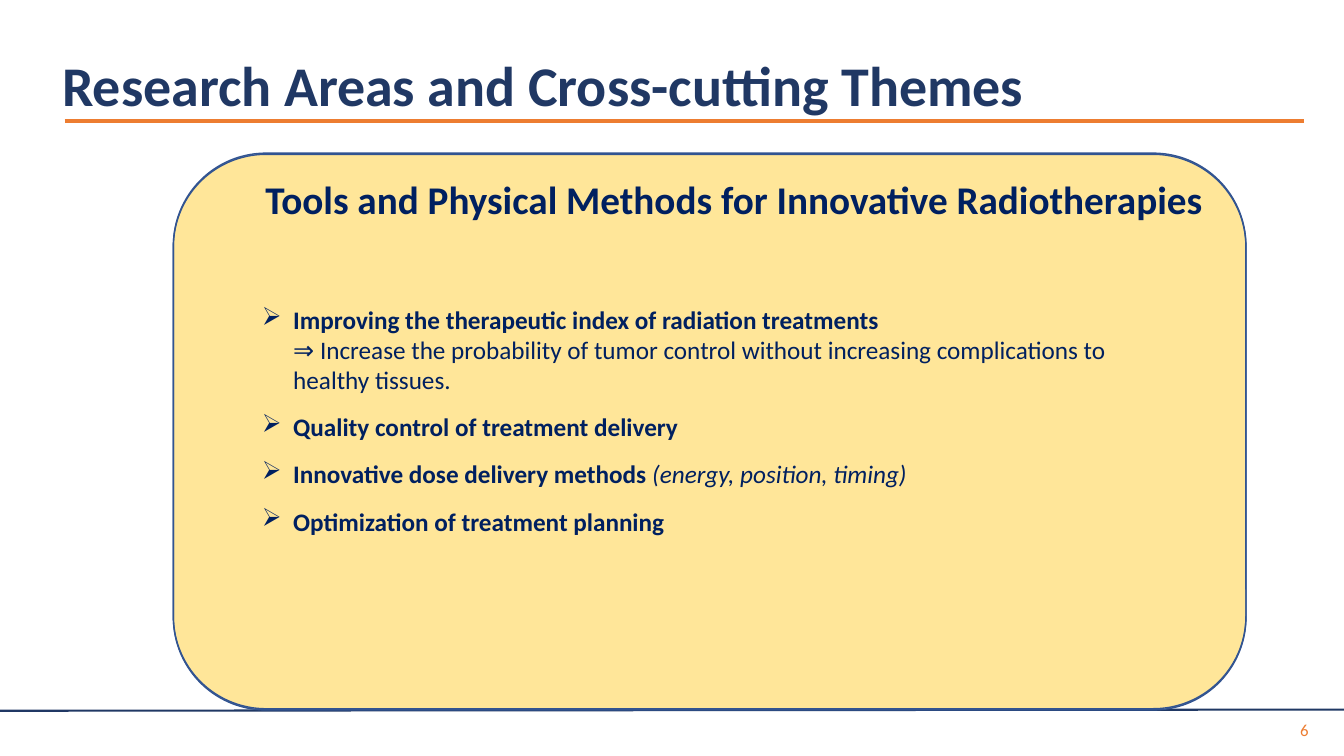
from lxml import etree
from pptx import Presentation
from pptx.dml.color import RGBColor
from pptx.enum.shapes import MSO_CONNECTOR, MSO_SHAPE
from pptx.enum.text import MSO_ANCHOR, MSO_AUTO_SIZE, PP_ALIGN
from pptx.oxml.ns import qn
from pptx.util import Cm, Pt

STRAIGHT = MSO_CONNECTOR.STRAIGHT
ROUNDED = MSO_SHAPE.ROUNDED_RECTANGLE
TOP, MIDDLE = MSO_ANCHOR.TOP, MSO_ANCHOR.MIDDLE
GROW, FIXED = MSO_AUTO_SIZE.SHAPE_TO_FIT_TEXT, MSO_AUTO_SIZE.NONE
LEFT, CENTER, RIGHT = PP_ALIGN.LEFT, PP_ALIGN.CENTER, PP_ALIGN.RIGHT

ORANGE = RGBColor(0xED, 0x7D, 0x31)
TITLE_BLUE = RGBColor(0x20, 0x38, 0x64)
TEXT_NAVY = RGBColor(0x00, 0x20, 0x60)
PANEL_YELLOW = RGBColor(0xFF, 0xE6, 0x99)
PANEL_BORDER = RGBColor(0x32, 0x54, 0x91)

BOLD, PLAIN = {"bold": True}, {"bold": False}
ITALIC = {"bold": False, "italic": True}
LINE_BREAK = None

THEMES = [
    [
        ("Improving the therapeutic index of radiation treatments", BOLD),
        LINE_BREAK,
        ("⇒ Increase the probability of tumor control without increasing "
         "complications to healthy tissues.", PLAIN),
    ],
    [("Quality control of treatment delivery", BOLD)],
    [("Innovative dose delivery methods ", BOLD),
     ("(energy, position, timing)", ITALIC)],
    [("Optimization of treatment planning", BOLD)],
]


class SlideBuilder:
    font_name = "Calibri"

    def __init__(self, slide):
        self.slide = slide

    def rule(self, start, end, color, width):
        points = [Cm(value) for value in (*start, *end)]
        connector = self.slide.shapes.add_connector(STRAIGHT, *points)
        connector.line.color.rgb = color
        connector.line.width = Pt(width)
        etree.SubElement(connector._element.spPr, qn("a:effectLst"))

    def panel(self, box, fill=None):
        shape = self.slide.shapes.add_shape(ROUNDED, *map(Cm, box))
        shape.shadow.inherit = False
        if fill is None:
            shape.fill.background()
        else:
            shape.fill.solid()
            shape.fill.fore_color.rgb = fill
        shape.line.color.rgb = PANEL_BORDER
        shape.line.width = Pt(1)

    def frame(self, box, anchor=TOP, auto_size=FIXED):
        text_frame = self.slide.shapes.add_textbox(*map(Cm, box)).text_frame
        settings = {"word_wrap": True, "vertical_anchor": anchor,
                    "auto_size": auto_size}
        for name, value in settings.items():
            setattr(text_frame, name, value)
        return text_frame

    def style(self, paragraph, size, color, **formats):
        font = paragraph.font
        font.name = self.font_name
        font.size = Pt(size)
        font.color.rgb = color
        for name, value in formats.items():
            setattr(paragraph, name, value)

    def add_run(self, paragraph, text, formats):
        run = paragraph.add_run()
        run.text = text
        for name, value in formats.items():
            setattr(run.font, name, value)

    def label(self, box, text, size, color, bold=False, anchor=MIDDLE,
              auto_size=FIXED, indent=0, **formats):
        paragraph = self.frame(box, anchor, auto_size).paragraphs[0]
        paragraph._p.get_or_add_pPr().set("marL", str(Cm(indent)))
        self.style(paragraph, size, color, **formats)
        self.add_run(paragraph, text, {"bold": bold})

    def bullets(self, box, items, size, color, indent):
        text_frame = self.frame(box, auto_size=GROW)
        for index, item in enumerate(items):
            paragraph = text_frame.add_paragraph() if index else text_frame.paragraphs[0]
            properties = paragraph._p.get_or_add_pPr()
            properties.set("marL", str(Cm(indent)))
            properties.set("indent", str(-Cm(indent)))
            etree.SubElement(properties, qn("a:buChar"), char="➢")
            self.style(paragraph, size, color, alignment=LEFT,
                       line_spacing=Pt(21.6), space_after=Pt(6),
                       space_before=Pt(6 if index else 0))
            for part in item:
                if part is LINE_BREAK:
                    paragraph.add_line_break()
                else:
                    self.add_run(paragraph, *part)


def main():
    presentation = Presentation()
    presentation.slide_width = Cm(33.87)
    presentation.slide_height = Cm(19.05)
    slide = presentation.slides.add_slide(presentation.slide_layouts[6])
    builder = SlideBuilder(slide)

    builder.rule((1.63, 3.05), (32.87, 3.05), ORANGE, 3)
    builder.rule((0, 17.91), (33.87, 17.88), TITLE_BLUE, 1.5)
    builder.label((31.88, 17.88, 1.35, 1.02), "6", 12, ORANGE, alignment=RIGHT)
    builder.panel((4.37, 3.89, 27.03, 14), PANEL_YELLOW)
    builder.label((2.31, 4.29, 31.09, 1.45),
                  "Tools and Physical Methods for Innovative Radiotherapies",
                  28, TEXT_NAVY, bold=True, anchor=TOP, auto_size=GROW,
                  indent=1.27, alignment=CENTER)
    builder.bullets((6.35, 7.54, 23.57, 7.21), THEMES, 18, TEXT_NAVY, 0.79)
    builder.panel((4.37, 3.86, 27.03, 14))
    builder.label((1.32, 0.38, 31.55, 3.68),
                  "Research Areas and Cross-cutting Themes",
                  40, TITLE_BLUE, bold=True, alignment=LEFT, line_spacing=0.9)

    presentation.save("out.pptx")


if __name__ == "__main__":
    main()
